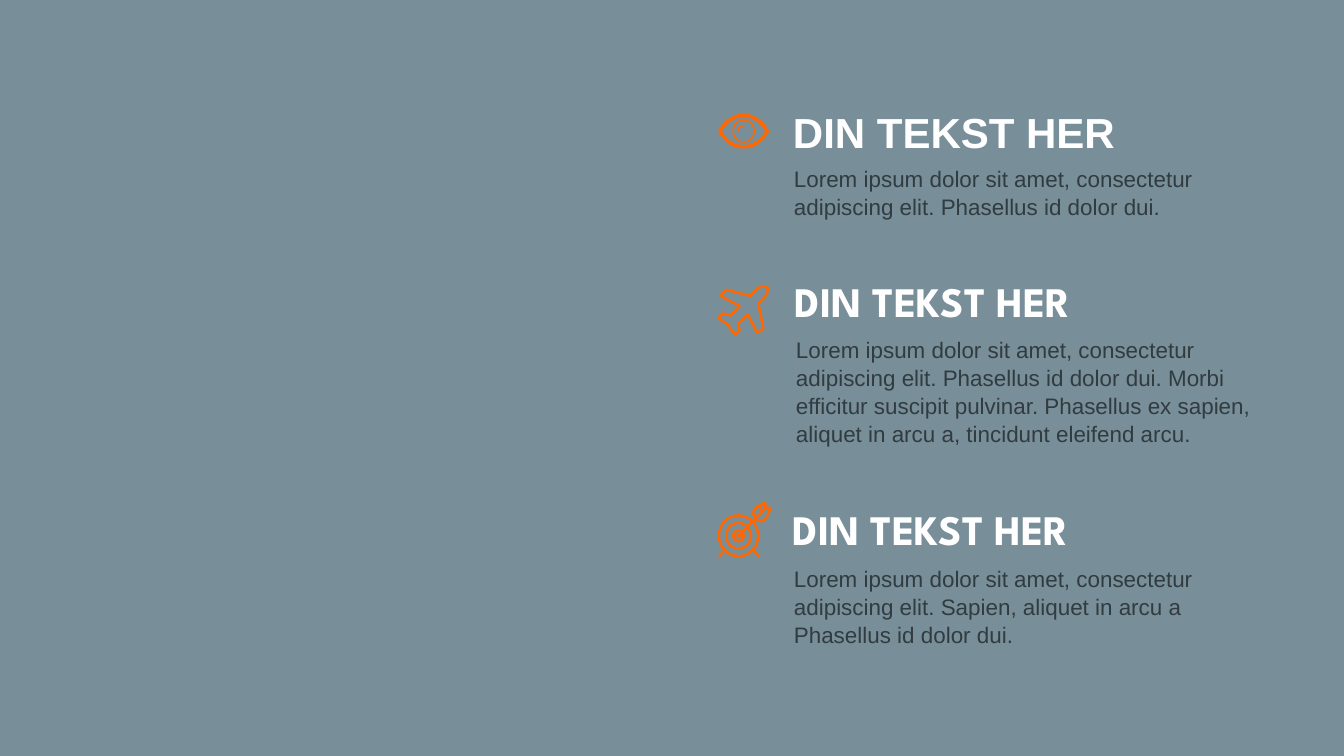
import pptx
import pptx.util
import pptx.dml.color
import pptx.enum.shapes
import pptx.enum.text
import pptx.oxml
from dataclasses import dataclass

PX = 9144  # EMU per px, 100 px to the inch
SHAPE = pptx.enum.shapes.MSO_SHAPE


@dataclass(frozen=True)
class Theme:
    background: str = "788E99"
    accent: str = "FF6800"
    heading: str = "FFFFFF"
    body: str = "313C41"
    heading_size: int = 60
    body_size: int = 32
    body_font: str = "Arial"
    display_font: str = "League Spartan"
    body_spacing: float = 1.04


THEME = Theme()


def rgb(value):
    return pptx.dml.color.RGBColor.from_string(value)


def px(value):
    return pptx.util.Emu(round(value * PX))


# ---- Text ----
def write(holder, box, text, font, size, color, bold=False, spacing=1.0):
    holder.left, holder.top, holder.width, holder.height = map(px, box)
    frame = holder.text_frame
    frame.word_wrap = True
    frame.auto_size = pptx.enum.text.MSO_AUTO_SIZE.NONE
    frame.vertical_anchor = pptx.enum.text.MSO_ANCHOR.TOP
    paragraph = frame.paragraphs[0]
    paragraph.alignment = pptx.enum.text.PP_ALIGN.LEFT
    paragraph.line_spacing = spacing
    run = paragraph.add_run()
    run.text = text
    run.font.name = font
    run.font.size = pptx.util.Pt(size)
    run.font.bold = bold
    run.font.color.rgb = rgb(color)


def text_block(slide, heading_box, body_box, heading, body, font, title=None):
    """Heading with its paragraph; the first heading is the slide title."""
    heading_holder = title or slide.shapes.add_textbox(0, 0, 0, 0)
    write(heading_holder, heading_box, heading, font,
          THEME.heading_size, THEME.heading, bold=True)
    write(slide.shapes.add_textbox(0, 0, 0, 0), body_box, body, THEME.body_font,
          THEME.body_size, THEME.body, spacing=THEME.body_spacing)


# ---- Icon strokes ----
def bezier(start, control_1, control_2, end, steps=10):
    for step in range(1, steps + 1):
        t = step / steps
        u = 1 - t
        yield tuple(u**3 * a + 3 * u * u * t * b + 3 * u * t * t * c + t**3 * d
                    for a, b, c, d in zip(start, control_1, control_2, end))


def outline(slide, origin, start, segments, width, close=True):
    """Stroke a path; a segment is one point, or two controls and a point."""
    points = [start]
    for segment in segments:
        if len(segment) == 2:
            points.append(segment)
        else:
            points.extend(bezier(points[-1], segment[:2], segment[2:4], segment[4:]))
    builder = slide.shapes.build_freeform(*start, scale=PX)
    builder.add_line_segments(points[1:], close=close)
    stroke = builder.convert_to_shape(*map(px, origin))
    stroke.shadow.inherit = False
    stroke.fill.background()
    stroke.line.color.rgb = rgb(THEME.accent)
    stroke.line.width = px(width)


def bar(slide, origin, start, end, width):
    x, y = origin
    line = slide.shapes.add_connector(
        pptx.enum.shapes.MSO_CONNECTOR.STRAIGHT,
        px(x + start[0]), px(y + start[1]), px(x + end[0]), px(y + end[1]))
    line.line.color.rgb = rgb(THEME.accent)
    line.line.width = px(width)
    line.line._get_or_add_ln().set("cap", "rnd")
    line._element.spPr.append(pptx.oxml.parse_xml(
        '<a:effectLst xmlns:a="http://schemas.openxmlformats.org/drawingml/2006/main"/>'))


def ring(slide, center, width, height, thickness=None):
    """Ring around a center, or a full disc without a thickness."""
    x, y = center
    disc = slide.shapes.add_shape(
        SHAPE.DONUT if thickness else SHAPE.OVAL,
        px(x - width / 2), px(y - height / 2), px(width), px(height))
    if thickness:
        disc.adjustments[0] = thickness / min(width, height)
    disc.shadow.inherit = False
    disc.fill.solid()
    disc.fill.fore_color.rgb = rgb(THEME.accent)
    disc.line.fill.background()


# ---- Icons ----
def eye_icon(slide, x, y):
    outline(slide, (x, y), (4, 34), [
        (13, 16, 32, 3, 51, 3), (70, 3, 89, 16, 98, 34),
        (89, 53, 70, 65, 51, 65), (32, 65, 13, 53, 4, 34)], 7)
    outline(slide, (x, y), (40, 35), [(40, 28, 45, 23, 52, 23)], 3, close=False)
    ring(slide, (x + 51, y + 34), 45, 47, 3)


def plane_icon(slide, x, y):
    outline(slide, (x, y), (2, 66), [
        # left tail, body, right wing
        (20, 80), (33, 98), (35, 98), (43, 90), (40, 77), (59, 58),
        (77, 94), (79, 95), (90, 87), (90, 85), (80, 37),
        # nose
        (91, 26), (95, 22, 97, 18, 98, 14), (101, 7, 98, 3, 92, 3),
        (86, 3, 80, 6, 75, 11),
        # left wing and back to the tail
        (64, 22), (17, 10), (15, 11), (7, 20), (7, 23), (43, 42),
        (25, 61), (11, 57), (9, 58), (2, 65)], 5)


def target_icon(slide, x, y):
    center = (x + 41, y + 68)
    for width, height, thickness in [(83, 86, 5), (54, 56, 5), (26, 27, 6), (9, 9, None)]:
        ring(slide, center, width, height, thickness)
    # arrow shaft, feather and feet
    for start, end in [((41, 68), (94, 13)), ((84, 8), (84, 24)),
                       ((14, 96), (3, 108)), ((69, 96), (80, 108))]:
        bar(slide, (x, y), start, end, 5)
    # arrow flight
    outline(slide, (x, y), (94, 3), [
        (85, 6, 72, 12, 70, 22), (70, 26, 72, 30, 75, 33),
        (78, 37, 82, 39, 85, 39), (94, 39, 101, 25, 104, 13), (94, 13)], 5)


def main():
    deck = pptx.Presentation()
    deck.slide_width, deck.slide_height = px(2666), px(1500)
    slide = deck.slides.add_slide(deck.slide_layouts.get_by_name("Title Only"))
    slide.background.fill.solid()
    slide.background.fill.fore_color.rgb = rgb(THEME.background)

    heading = "DIN TEKST HER"
    lorem = "Lorem ipsum dolor sit amet, consectetur adipiscing elit. "

    # Vision
    text_block(slide, (1563, 206, 879, 111), (1565, 320, 927, 118), heading,
               lorem + "Phasellus id dolor dui.", THEME.body_font, slide.shapes.title)
    eye_icon(slide, 1424, 226)

    # Travel
    text_block(slide, (1567, 541, 947, 111), (1569, 660, 923, 226), heading,
               lorem + "Phasellus id dolor dui. Morbi efficitur suscipit pulvinar. "
               "Phasellus ex sapien, aliquet in arcu a, tincidunt eleifend arcu.",
               THEME.display_font)
    plane_icon(slide, 1424, 565)

    # Goal
    text_block(slide, (1563, 995, 813, 111), (1565, 1114, 927, 172), heading,
               lorem + "Sapien, aliquet in arcu a Phasellus id dolor dui.",
               THEME.display_font)
    target_icon(slide, 1424, 995)

    deck.save("out.pptx")


if __name__ == "__main__":
    main()
